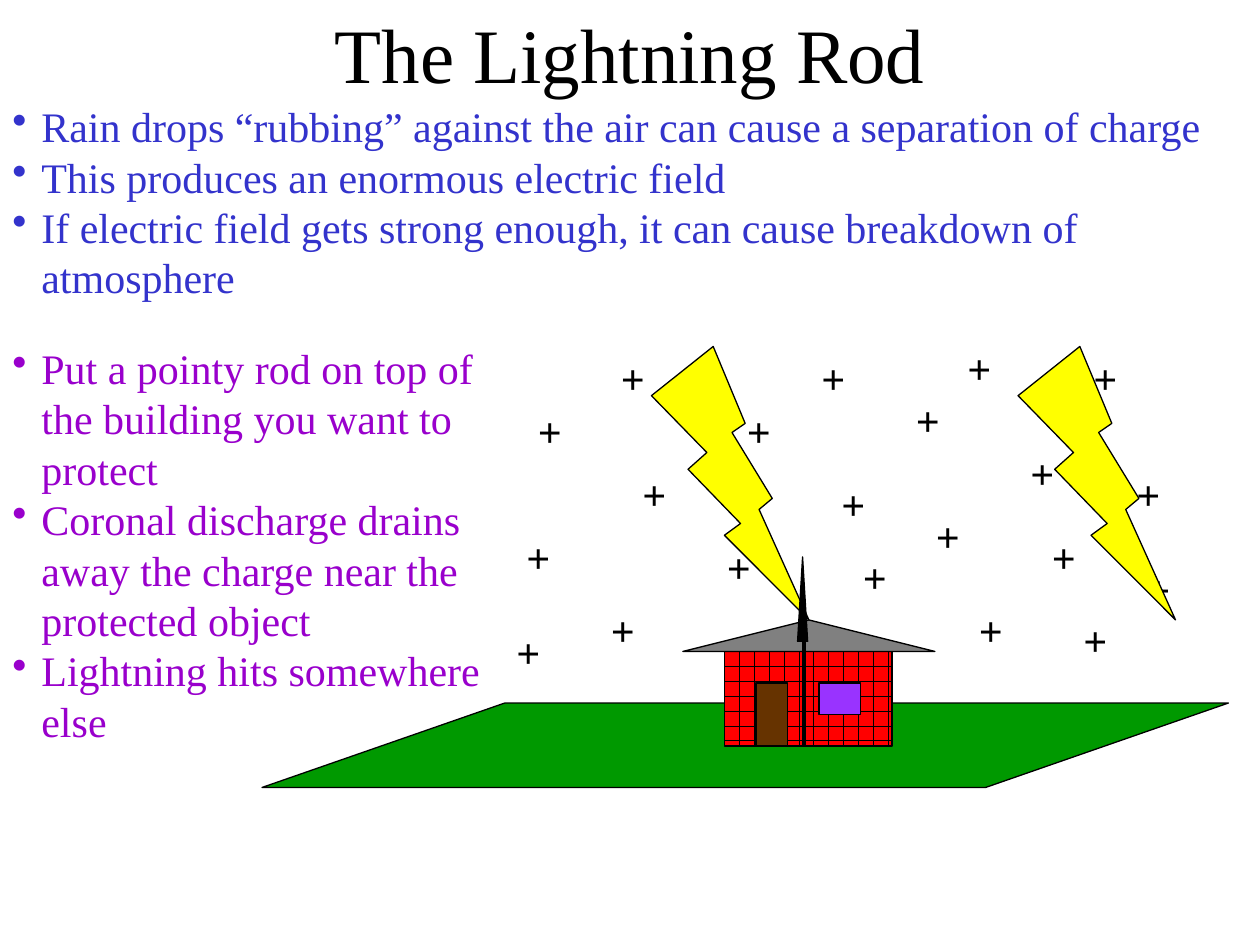
from dataclasses import dataclass
from lxml.etree import SubElement
from pptx import Presentation
from pptx.dml.color import RGBColor
from pptx.enum.dml import MSO_PATTERN
from pptx.enum.shapes import MSO_CONNECTOR, MSO_SHAPE
from pptx.enum.text import PP_ALIGN
from pptx.oxml.ns import qn
from pptx.util import Inches, Pt


@dataclass(frozen=True)
class Theme:
    font: str = "Times New Roman"
    title_size: float = 44
    body_size: float = 24
    outline: float = 0.75
    rod_width: float = 2.25
    bullet_indent: float = 0.23
    black: str = "000000"
    cause: str = "3333CC"
    protection: str = "9900CC"
    grass: str = "009900"
    brick: str = "FF0000"
    roof: str = "808080"
    door: str = "663300"
    window: str = "9933FF"
    bolt: str = "FFFF00"


class SlideBuilder:
    def __init__(self, slide, theme):
        self.s = slide
        self.theme = theme

    def text(self, box, lines, size, color, bold=False, align=PP_ALIGN.LEFT, bullets=False):
        sp = self.s.shapes.add_textbox(*map(Inches, box))
        tf = sp.text_frame
        tf.word_wrap = True
        tf.text = "\n".join(lines)
        for p in tf.paragraphs:
            p.alignment = align
            if bullets:
                self.bullet(p)
            for r in p.runs:
                r.font.name = self.theme.font
                r.font.size = Pt(size)
                r.font.bold = bold
                r.font.color.rgb = RGBColor.from_string(color)

    def bullet(self, p):
        indent = Inches(self.theme.bullet_indent)
        pPr = p._p.get_or_add_pPr()
        pPr.set("marL", str(indent))
        pPr.set("indent", str(-indent))
        SubElement(pPr, qn("a:buChar")).set("char", "•")

    def shape(self, kind, box, color, adjustment=None):
        sp = self.s.shapes.add_shape(kind, *map(Inches, box))
        sp.shadow.inherit = False
        if adjustment is not None:
            sp.adjustments[0] = adjustment
        sp.fill.solid()
        sp.fill.fore_color.rgb = RGBColor.from_string(color)
        sp.line.color.rgb = RGBColor.from_string(self.theme.black)
        sp.line.width = Pt(self.theme.outline)
        return sp

    def brick_wall(self, box):
        fill = self.shape(MSO_SHAPE.RECTANGLE, box, self.theme.brick).fill
        fill.patterned()
        fill.pattern = MSO_PATTERN.HORIZONTAL_BRICK
        fill.fore_color.rgb = RGBColor.from_string(self.theme.black)
        fill.back_color.rgb = RGBColor.from_string(self.theme.brick)

    def line(self, start, end, width):
        cx = self.s.shapes.add_connector(MSO_CONNECTOR.STRAIGHT, *map(Inches, start + end))
        cx.line.color.rgb = RGBColor.from_string(self.theme.black)
        cx.line.width = Pt(width)
        SubElement(cx._element.spPr, qn("a:effectLst"))

    def charge(self, x, y):
        self.text((x, y, 0.5, 0.5), ["+"], self.theme.body_size, self.theme.black, bold=True)

    def bolt(self, x):
        self.shape(MSO_SHAPE.LIGHTNING_BOLT, (x, 2.75, 1.25, 2.17), self.theme.bolt)


CAUSES = [
    "Rain drops “rubbing” against the air can cause a separation of charge",
    "This produces an enormous electric field",
    "If electric field gets strong enough, it can cause breakdown of atmosphere",
]
PROTECTION = [
    "Put a pointy rod on top of the building you want to protect",
    "Coronal discharge drains away the charge near the protected object",
    "Lightning hits somewhere else",
]
CHARGES = [
    (4.17, 3.17), (4.83, 2.75), (4.08, 4.17), (4.75, 4.75), (6.42, 2.75), (7.17, 3.08),
    (8.08, 3.5), (7.67, 4.75), (8.25, 4.17), (8.5, 4.83), (9, 4.42), (8.92, 3.67),
    (8.58, 2.75), (7.58, 2.67), (4, 4.92), (5.83, 3.17), (5, 3.67), (5.67, 4.25),
    (6.58, 3.75), (6.75, 4.33), (7.33, 4),
]


def main():
    prs = Presentation()
    prs.slide_width, prs.slide_height = Inches(10), Inches(7.5)
    theme = Theme()
    b = SlideBuilder(prs.slides.add_slide(prs.slide_layouts[6]), theme)

    b.text((0, 0, 10, 0.83), ["The Lightning Rod"], theme.title_size, theme.black,
           align=PP_ALIGN.CENTER)
    b.text((0, 0.75, 9.83, 1.7), CAUSES, theme.body_size, theme.cause, bullets=True)

    b.shape(MSO_SHAPE.PARALLELOGRAM, (2.08, 5.58, 7.67, 0.67), theme.grass, 2.875)
    b.brick_wall((5.75, 5.17, 1.33, 0.75))
    b.shape(MSO_SHAPE.ISOSCELES_TRIANGLE, (5.42, 4.92, 2, 0.25), theme.roof)
    b.shape(MSO_SHAPE.RECTANGLE, (6, 5.42, 0.25, 0.5), theme.door)
    b.shape(MSO_SHAPE.RECTANGLE, (6.5, 5.42, 0.33, 0.25), theme.window)

    for x, y in CHARGES:
        b.charge(x, y)

    b.bolt(5.17)
    b.text((0, 2.67, 3.92, 3.3), PROTECTION, theme.body_size, theme.protection, bullets=True)
    b.shape(MSO_SHAPE.ISOSCELES_TRIANGLE, (6.33, 4.42, 0.08, 0.67), theme.black)
    b.line((6.38, 5.08), (6.38, 5.92), theme.rod_width)
    b.bolt(8.08)

    prs.save("out.pptx")


if __name__ == "__main__":
    main()
